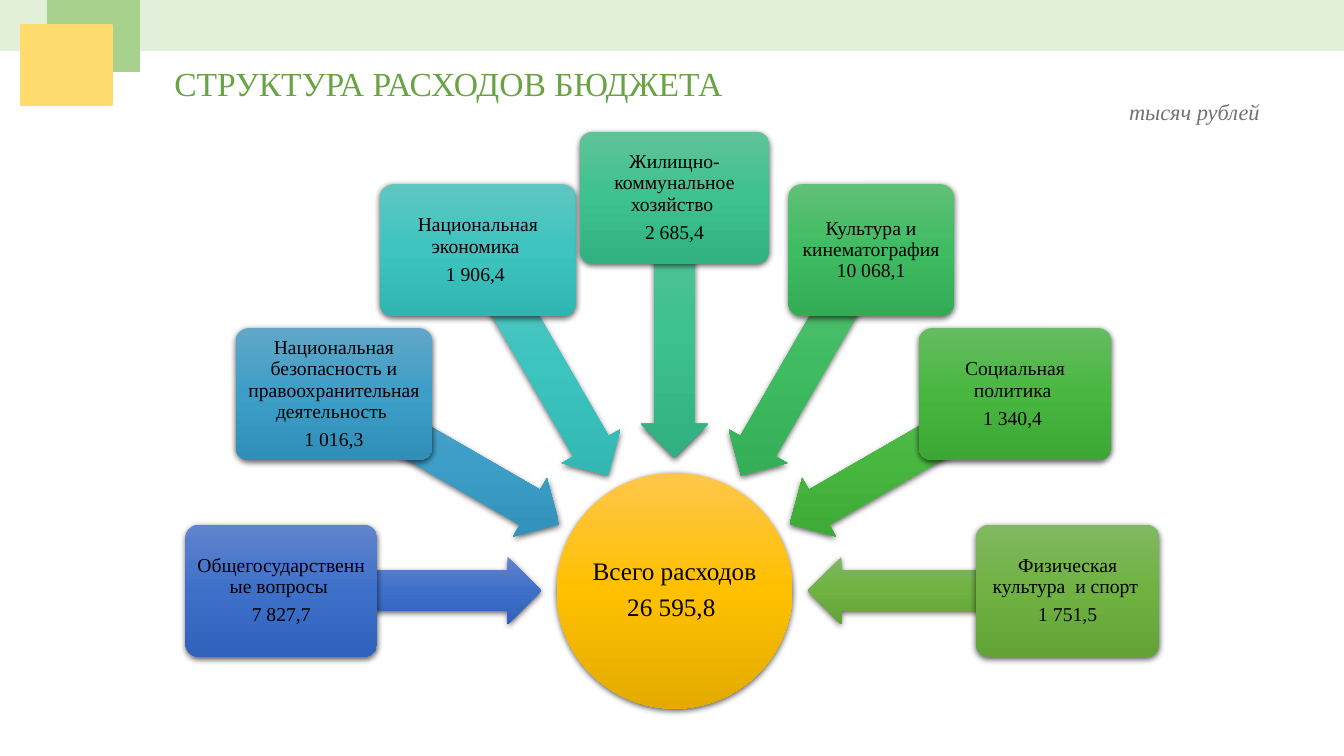
import math
from dataclasses import dataclass

import pptx
import pptx.dml.color
import pptx.enum.shapes
import pptx.enum.text
import pptx.oxml
import pptx.oxml.ns
import pptx.util

PX = 9144  # EMU per px, 100 px to the inch
KIND = pptx.enum.shapes.MSO_SHAPE
ALIGN = pptx.enum.text.PP_ALIGN
ANCHOR = pptx.enum.text.MSO_ANCHOR
FIT = pptx.enum.text.MSO_AUTO_SIZE


@dataclass(frozen=True)
class Theme:
    font: str = "Times New Roman"
    title: int = 24
    total: int = 18
    note: int = 16
    label: int = 14
    ink: str = "000000"
    green: str = "6AA343"
    gray: str = "767171"
    band: str = "E2F0D9"
    leaf: str = "A9D18E"
    sun: str = "FFDC6D"
    gold: tuple = ("FFC64B", "FFC000", "E3AB00")


THEME = Theme()

# Lines of text, box width, gradient colours; clockwise from the left
ITEMS = [
    (["Общегосударственные вопросы ", "7 827,7"], 190, ("6183CB", "3E70CA", "3062BB")),
    (["Национальная безопасность и правоохранительная деятельность ", "1 016,3"],
     195, ("61A6C8", "3D9EC7", "308FB8")),
    (["Национальная экономика ", "1 906,4 "], 194, ("60C6C1", "3DC4BF", "30B5B0")),
    (["Жилищно-коммунальное хозяйство ", "2 685,4"], 188, ("60C39A", "3DC18F", "31B080")),
    (["Культура и кинематография 10 068,1"], 164, ("60C077", "3FBC62", "33AC55")),
    (["Социальная политика ", "1 340,4 "], 191, ("65BC61", "48B740", "3CA735")),
    (["Физическая культура  и спорт ", "1 751,5"], 182, ("81B861", "6FB242", "62A336")),
]


def emu(*sizes):
    return [round(size * PX) for size in sizes]


def rgb(code):
    return pptx.dml.color.RGBColor.from_string(code)


def node(tag, body):
    """Build one drawing element from its tag and inner markup."""
    name = tag.split()[0]
    return pptx.oxml.parse_xml(
        f'<a:{tag} {pptx.oxml.ns.nsdecls("a")}>{body}</a:{name}>')


def write(frame, lines, size, color=THEME.ink, italic=False, align=None,
          leading=None, after=None):
    for i, line in enumerate(lines):
        para = frame.paragraphs[0] if i == 0 else frame.add_paragraph()
        para.alignment = align
        para.line_spacing = leading
        para.space_after = after
        run = para.add_run()
        run.text = line
        run.font.name = THEME.font
        run.font.size = pptx.util.Pt(size)
        run.font.italic = italic
        run.font.color.rgb = rgb(color)


def fill_in(shape, lines, size, inset):
    """Write centred lines inside a shape."""
    frame = shape.text_frame
    frame.word_wrap = True
    frame.vertical_anchor = ANCHOR.MIDDLE
    frame.margin_left = frame.margin_right = inset * PX
    frame.margin_top = frame.margin_bottom = inset * PX
    write(frame, lines, size, align=ALIGN.CENTER, leading=0.9,
          after=pptx.util.Pt(0.35 * size))


def caption(slide, box, text, size, **form):
    frame = slide.shapes.add_textbox(*emu(*box)).text_frame
    frame.word_wrap = False
    frame.auto_size = FIT.SHAPE_TO_FIT_TEXT
    write(frame, [text], size, **form)


def block(slide, box, color):
    shape = slide.shapes.add_shape(KIND.RECTANGLE, *emu(*box))
    shape.shadow.inherit = False
    shape.fill.solid()
    shape.fill.fore_color.rgb = rgb(color)
    shape.line.color.rgb = rgb(color)
    shape.line.width = pptx.util.Pt(1)


def glossy(slide, kind, mid, size, colors):
    """Add a shape around a midpoint, with a gradient and a soft shadow."""
    (x, y), (w, h) = mid, size
    shape = slide.shapes.add_shape(kind, *emu(x - w / 2, y - h / 2, w, h))
    shape.fill.background()
    shape.line.fill.background()
    shape.shadow.inherit = False
    props = shape._element.spPr
    stops = "".join(f'<a:gs pos="{i * 50000}"><a:srgbClr val="{color}"/></a:gs>'
                    for i, color in enumerate(colors))
    grad = node('gradFill rotWithShape="0"',
                f'<a:gsLst>{stops}</a:gsLst><a:lin ang="5400000" scaled="0"/>')
    props.replace(props.find(pptx.oxml.ns.qn("a:noFill")), grad)
    props.find(pptx.oxml.ns.qn("a:effectLst")).append(node(
        'outerShdw blurRad="57150" dist="19050" dir="5400000" algn="ctr" rotWithShape="0"',
        '<a:srgbClr val="000000"><a:alpha val="63000"/></a:srgbClr>'))
    return shape


def header(slide, box):
    x, y, w, h = box
    # Title
    caption(slide, (x + 163, y + 58, 569, 50), "СТРУКТУРА РАСХОДОВ БЮДЖЕТА",
            THEME.title, color=THEME.green)
    # Band and corner squares
    block(slide, (x, y, w, 50), THEME.band)
    block(slide, (x + 47, y, 91, 71), THEME.leaf)
    block(slide, (x + 21, y + 25, 90, 80), THEME.sun)
    # Unit note
    caption(slide, (x + w - 223, y + h - 37, 152, 37), "тысяч рублей",
            THEME.note, color=THEME.gray, italic=True)


def wheel(slide, box):
    x, y, w, h = box
    hub = 234
    mid = (x + w / 2, y + h - hub / 2)

    def polar(reach, angle):
        turn = math.radians(angle)
        return mid[0] + reach * math.cos(turn), mid[1] + reach * math.sin(turn)

    # Total in the centre
    disc = glossy(slide, KIND.OVAL, mid, (hub, hub), THEME.gold)
    fill_in(disc, ["Всего расходов ", "26 595,8 "], THEME.total, 1)

    # Expense boxes, each with an arrow to the centre
    step = 180 / (len(ITEMS) - 1)
    for i, (lines, width, colors) in enumerate(ITEMS):
        angle = 180 + i * step
        arrow = glossy(slide, KIND.LEFT_ARROW, polar(261, angle), (258, 67), colors)
        arrow.adjustments[0] = 0.6
        arrow.adjustments[1] = 0.5
        arrow.rotation = angle % 360
        card = glossy(slide, KIND.ROUNDED_RECTANGLE, polar(390, angle),
                      (width, 131), colors)
        card.adjustments[0] = 0.1
        fill_in(card, lines, THEME.label, 3)


def main():
    deck = pptx.Presentation()
    deck.slide_width, deck.slide_height = emu(1333, 750)
    slide = deck.slides.add_slide(deck.slide_layouts[6])
    header(slide, (0, 0, 1333, 129))
    wheel(slide, (179, 130, 980, 573))
    deck.save("out.pptx")


if __name__ == "__main__":
    main()
